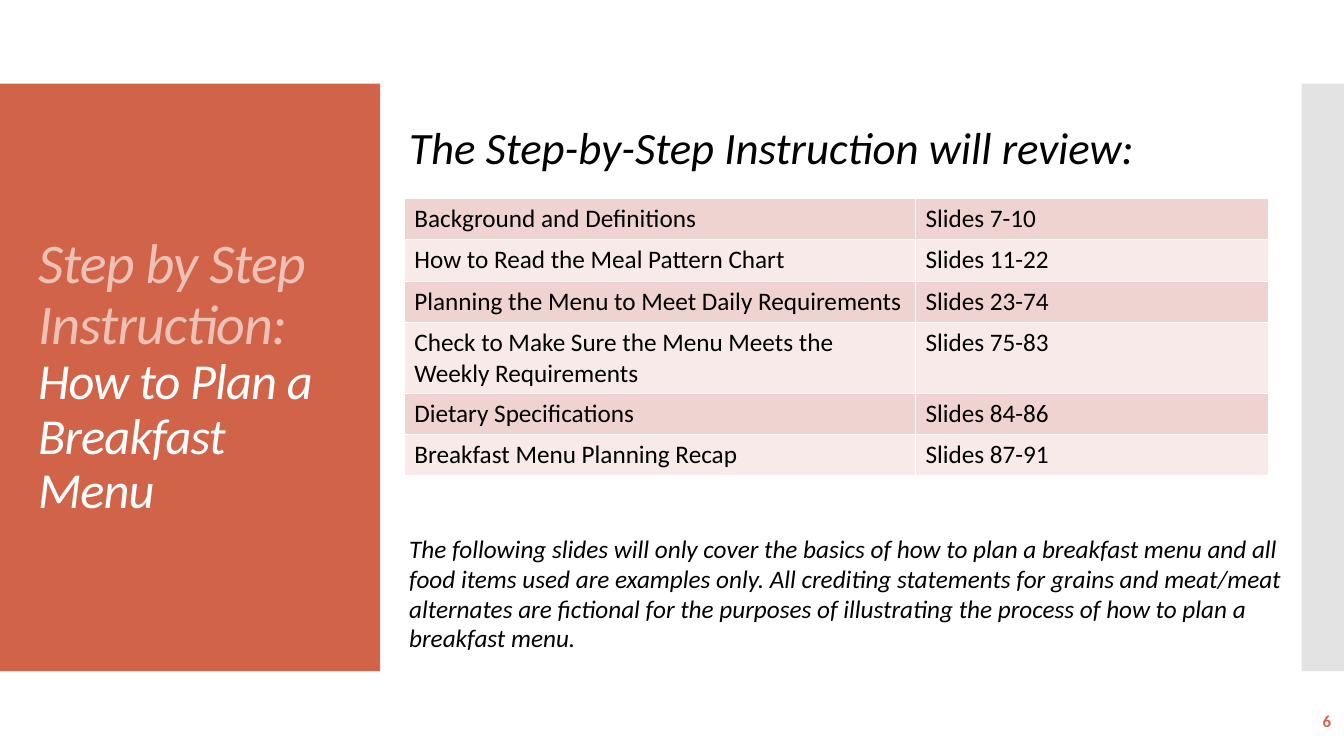
from dataclasses import dataclass

from lxml import etree
from pptx import Presentation
from pptx.dml.color import RGBColor
from pptx.enum.shapes import MSO_SHAPE as SHAPE
from pptx.enum.text import MSO_ANCHOR as ANCHOR, PP_ALIGN as ALIGN
from pptx.oxml.ns import qn
from pptx.util import Emu, Pt

# Content
TITLE_LEAD = "Step by Step Instruction:"
TITLE_TOPIC = "How to Plan a Breakfast Menu"
HEADING = "The Step-by-Step Instruction will review:"
REVIEW_ROWS = [
    ("Background and Definitions", "Slides 7-10"),
    ("How to Read the Meal Pattern Chart", "Slides 11-22"),
    ("Planning the Menu to Meet Daily Requirements", "Slides 23-74"),
    ("Check to Make Sure the Menu Meets the Weekly Requirements", "Slides 75-83"),
    ("Dietary Specifications", "Slides 84-86"),
    ("Breakfast Menu Planning Recap", "Slides 87-91"),
]
NOTE = (
    "The following slides will only cover the basics of how to plan a breakfast "
    "menu and all food items used are examples only. All crediting statements for "
    "grains and meat/meat alternates are fictional for the purposes of illustrating "
    "the process of how to plan a breakfast menu."
)
PAGE_NUMBER = "6"


@dataclass(frozen=True)
class Theme:
    font: str = "Calibri"
    accent: str = "D16349"
    side: str = "C8C8C8"
    lead: str = "EDC1B6"
    white: str = "FFFFFF"
    ink: str = "000000"
    bands: tuple = ("EED3D0", "F7EAE9")
    lead_size: int = 40
    topic_size: int = 36
    heading_size: int = 32
    body_size: int = 18
    number_size: int = 12


T = Theme()

# Layout in px, 100 px to the inch
EMU_PER_PX = 9144
SLIDE_W, SLIDE_H = 1333, 750
BAND_TOP, BAND_H = 83, 583
ACCENT_W, SIDE_W = 377, 42
TEXT_LEFT, TEXT_W = 396, 888
TABLE_LEFT, TABLE_TOP = 401, 197
COL_WIDTHS = (507, 350)
ROW_H = 41


def px(n):
    return Emu(n * EMU_PER_PX)


def box(x, y, w, h):
    return px(x), px(y), px(w), px(h)


def add_run(p, text, size, color, italic=False, bold=False):
    r = p.add_run()
    r.text = text
    f = r.font
    f.name, f.size, f.italic, f.bold = T.font, Pt(size), italic, bold
    f.color.rgb = RGBColor.from_string(color)
    return r


def add_text(slide, area, anchor=ANCHOR.TOP):
    tf = slide.shapes.add_textbox(*box(*area)).text_frame
    tf.word_wrap = True
    tf.vertical_anchor = anchor
    return tf.paragraphs[0]


def add_panel(slide, x, w, color):
    sp = slide.shapes.add_shape(SHAPE.RECTANGLE, *box(x, BAND_TOP, w, BAND_H))
    sp.shadow.inherit = False
    sp.fill.solid()
    sp.fill.fore_color.rgb = RGBColor.from_string(color)
    sp.line.fill.background()
    return sp


def tighten(r):
    r._r.get_or_add_rPr().set("spc", "-60")


def add_review_table(slide):
    area = box(TABLE_LEFT, TABLE_TOP, sum(COL_WIDTHS), ROW_H * len(REVIEW_ROWS))
    table = slide.shapes.add_table(len(REVIEW_ROWS), len(COL_WIDTHS), *area).table
    table.first_row = table.horz_banding = False
    for col, width in zip(table.columns, COL_WIDTHS):
        col.width = px(width)
    for i, texts in enumerate(REVIEW_ROWS):
        table.rows[i].height = px(ROW_H)
        for j, text in enumerate(texts):
            cell = table.cell(i, j)
            cell.fill.solid()
            cell.fill.fore_color.rgb = RGBColor.from_string(T.bands[i % 2])
            add_run(cell.text_frame.paragraphs[0], text, T.body_size, T.ink)


def main():
    prs = Presentation()
    prs.slide_width, prs.slide_height = px(SLIDE_W), px(SLIDE_H)
    slide = prs.slides.add_slide(prs.slide_layouts[6])

    # Side panels, the right one half transparent
    add_panel(slide, 0, ACCENT_W, T.accent)
    side = add_panel(slide, SLIDE_W - SIDE_W, SIDE_W, T.side)
    side_color = side._element.spPr.find(qn("a:solidFill")).find(qn("a:srgbClr"))
    etree.SubElement(side_color, qn("a:alpha")).set("val", "50000")

    # Heading, table and note
    p = add_text(slide, (TEXT_LEFT, 114, TEXT_W, 64))
    add_run(p, HEADING, T.heading_size, T.ink, italic=True)
    add_review_table(slide)
    p = add_text(slide, (TEXT_LEFT, 526, TEXT_W, 134))
    p.line_spacing = 0.98
    add_run(p, NOTE, T.body_size, T.ink, italic=True)

    # Title
    p = add_text(slide, (28, 123, 322, 503), ANCHOR.MIDDLE)
    p.line_spacing = 0.9
    tighten(add_run(p, TITLE_LEAD, T.lead_size, T.lead, italic=True))
    p.add_line_break()
    tighten(add_run(p, TITLE_TOPIC, T.topic_size, T.white, italic=True))

    # Page number
    p = add_text(slide, (1163, 695, 167, 40), ANCHOR.MIDDLE)
    p.alignment = ALIGN.RIGHT
    add_run(p, PAGE_NUMBER, T.number_size, T.accent, bold=True)

    prs.save("out.pptx")


if __name__ == "__main__":
    main()
